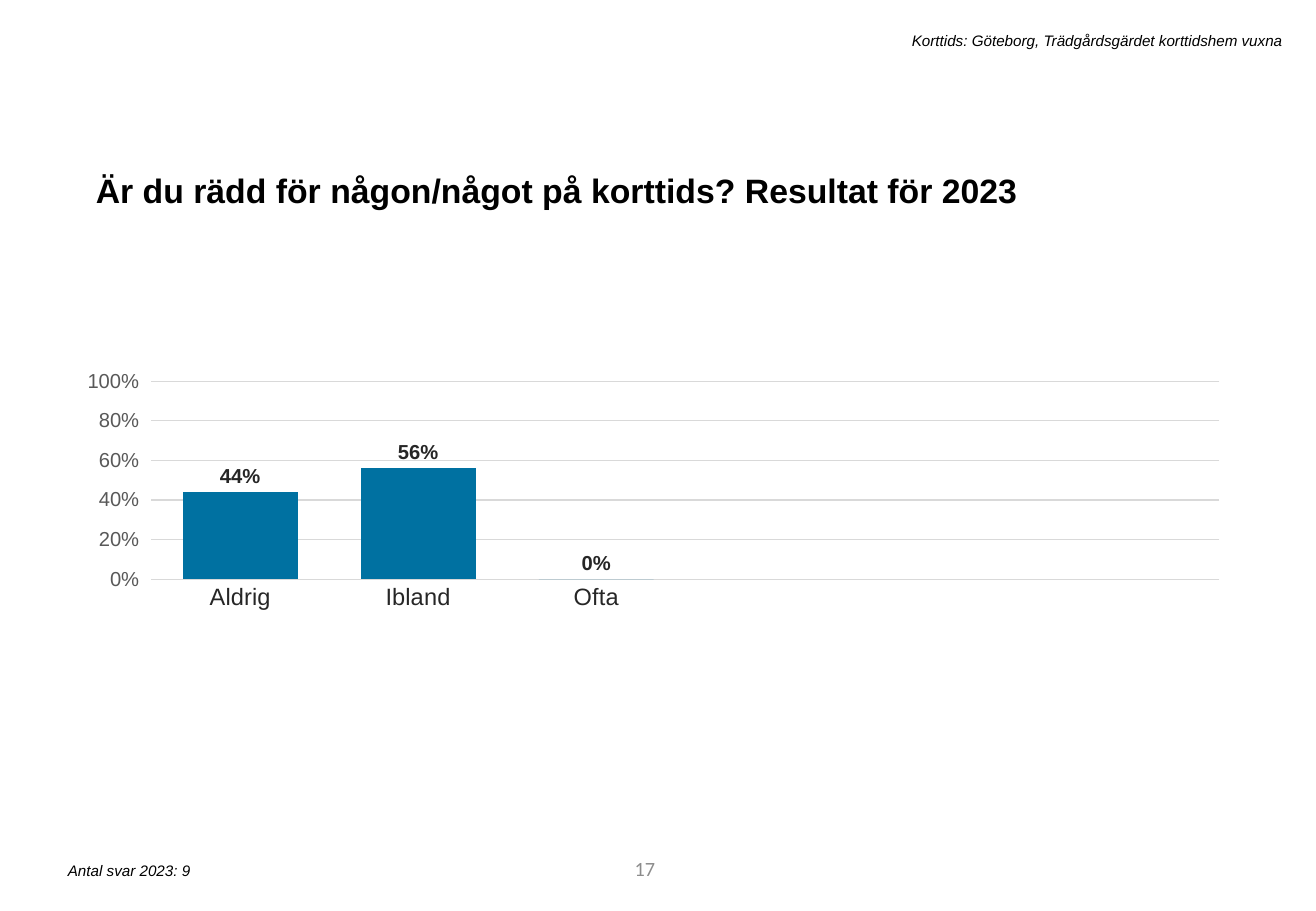
from dataclasses import dataclass

from lxml.etree import SubElement
from pptx import Presentation
from pptx.chart.data import CategoryChartData
from pptx.dml.color import RGBColor
from pptx.enum.chart import XL_CHART_TYPE, XL_LABEL_POSITION, XL_TICK_MARK
from pptx.enum.text import MSO_ANCHOR, MSO_AUTO_SIZE, PP_ALIGN
from pptx.oxml.ns import qn
from pptx.util import Pt

EMU_PER_PX = 9144  # 100 px to the inch


@dataclass(frozen=True)
class Theme:
    font: str = "Arial"
    number_font: str = "Calibri"
    ink: str = "000000"
    label: str = "262626"
    scale: str = "595959"
    page_number: str = "8C8C8C"
    grid: str = "D9D9D9"
    bar: str = "0071A1"
    title_size: int = 20
    category_size: int = 14
    value_size: int = 12
    chart_size: int = 10
    note_size: int = 9


THEME = Theme()


def px(length):
    return int(length * EMU_PER_PX)


def style_font(font, size, color, name=THEME.font, bold=False, italic=False):
    font.name = name
    font.size = Pt(size)
    font.bold = bold
    font.italic = italic
    font.color.rgb = RGBColor.from_string(color)


def add_text(page, bounds, text, size, color=THEME.ink, align=PP_ALIGN.LEFT, **style):
    """Add a one-line text box and return it."""
    box = page.shapes.add_textbox(*map(px, bounds))
    box.text_frame.word_wrap = True
    para = box.text_frame.paragraphs[0]
    para.alignment = align
    span = para.add_run()
    span.text = text
    style_font(span.font, size, color, **style)
    return box


def style_line(line):
    line.color.rgb = RGBColor.from_string(THEME.grid)
    line.width = Pt(0.75)


def place_plot(chart, **fractions):
    """Fix the inner plot area as fractions of the chart's size."""
    plot_area = chart._chartSpace.chart.plotArea
    layout = plot_area.find(qn("c:layout"))
    if layout is None:
        layout = SubElement(plot_area, qn("c:layout"))
        plot_area.insert(0, layout)
    manual = SubElement(layout, qn("c:manualLayout"))
    settings = {"layoutTarget": "inner", "xMode": "edge", "yMode": "edge", **fractions}
    for tag, value in settings.items():
        SubElement(manual, qn(f"c:{tag}")).set("val", str(value))


def style_axes(chart):
    categories = chart.category_axis
    categories.major_tick_mark = XL_TICK_MARK.NONE
    style_font(categories.tick_labels.font, THEME.category_size, THEME.label)
    style_line(categories.format.line)

    values = chart.value_axis
    values.minimum_scale, values.maximum_scale, values.major_unit = 0, 1, 0.2
    values.major_tick_mark = XL_TICK_MARK.OUTSIDE
    values.tick_labels.number_format = "0%"
    values.tick_labels.number_format_is_linked = False
    style_font(values.tick_labels.font, THEME.value_size, THEME.scale)
    values.format.line.fill.background()
    style_line(values.major_gridlines.format.line)


def add_answer_chart(page, bounds, answers, slots):
    """Add a column chart of answer shares, leaving the spare slots empty."""
    spare = slots - len(answers)
    data = CategoryChartData(number_format="0%")
    data.categories = [*answers, *[""] * spare]
    data.add_series("Series 1", [*answers.values(), *[None] * spare])
    chart = page.shapes.add_chart(
        XL_CHART_TYPE.COLUMN_CLUSTERED, *map(px, bounds), data
    ).chart
    chart.has_title = False
    chart.has_legend = False
    style_font(chart.font, THEME.chart_size, THEME.ink)
    place_plot(chart, x=0.054, y=0.154, w=0.937, h=0.413)
    style_axes(chart)

    plot = chart.plots[0]
    plot.gap_width = 55
    plot.vary_by_categories = False
    fill = plot.series[0].format.fill
    fill.solid()
    fill.fore_color.rgb = RGBColor.from_string(THEME.bar)

    labels = plot.series[0].data_labels
    labels.show_value = True
    labels.position = XL_LABEL_POSITION.OUTSIDE_END
    labels.number_format = "0%"
    labels.number_format_is_linked = False
    style_font(labels.font, THEME.value_size, THEME.label, bold=True)


def main():
    deck = Presentation()
    deck.slide_width, deck.slide_height = px(1083), px(750)
    page = deck.slides.add_slide(deck.slide_layouts[6])

    number = add_text(page, (305, 695, 244, 40), "17", THEME.value_size,
                      THEME.page_number, PP_ALIGN.RIGHT, name=THEME.number_font)
    number.text_frame.vertical_anchor = MSO_ANCHOR.MIDDLE

    title = add_text(page, (69, 128, 940, 47),
                     "Är du rädd för någon/något på korttids? Resultat för 2023",
                     THEME.title_size, bold=True)
    title.text_frame.paragraphs[0].line_spacing = 1.2
    title.text_frame.paragraphs[0].space_before = Pt(10)

    unit = add_text(page, (179, 21, 886, 25),
                    "Korttids: Göteborg, Trädgårdsgärdet korttidshem vuxna",
                    THEME.note_size, align=PP_ALIGN.RIGHT, italic=True)
    count = add_text(page, (46, 704, 441, 25), "Antal svar 2023: 9",
                     THEME.note_size, italic=True)
    for box in (title, unit, count):
        box.text_frame.auto_size = MSO_AUTO_SIZE.SHAPE_TO_FIT_TEXT

    answers = {"Aldrig": 0.44, "Ibland": 0.56, "Ofta": 0}
    add_answer_chart(page, (72, 253, 940, 395), answers, slots=6)
    deck.save("out.pptx")


if __name__ == "__main__":
    main()
